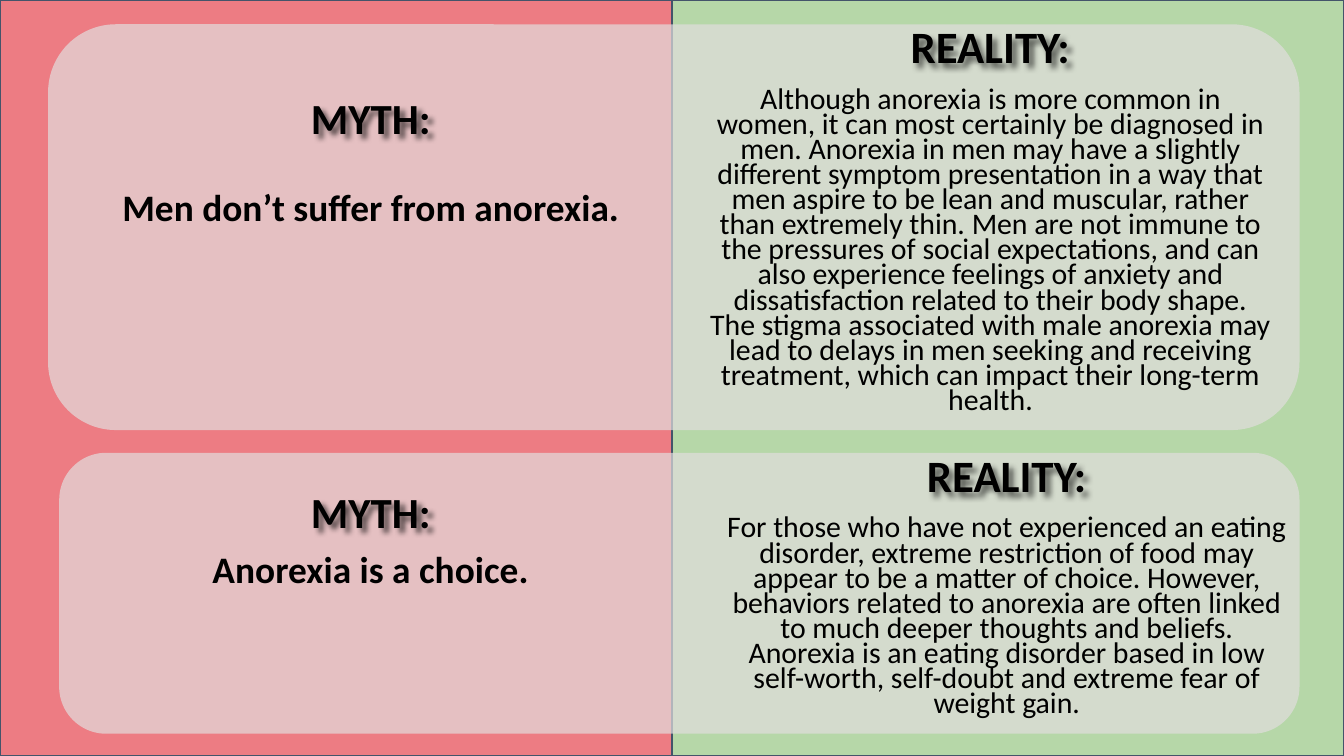
from typing import NamedTuple

from lxml import etree
from pptx import Presentation
from pptx.dml.color import RGBColor
from pptx.enum.shapes import MSO_SHAPE
from pptx.enum.text import MSO_ANCHOR, PP_ALIGN
from pptx.oxml.ns import qn
from pptx.util import Cm, Pt

RECTANGLE = MSO_SHAPE.RECTANGLE
ROUNDED = MSO_SHAPE.ROUNDED_RECTANGLE
TOP = MSO_ANCHOR.TOP
CENTER = PP_ALIGN.CENTER

SLIDE_WIDTH, SLIDE_HEIGHT = 25.4, 14.29
HALF = SLIDE_WIDTH / 2
FONT = "Calibri"
RED, GREEN, GREY = "ED7C83", "B6D7A8", "E2DEDE"
NAVY, BLACK = "44546A", "000000"
REALITY_INDENT = 0.48


class Box(NamedTuple):
    """Left, top, width and height in centimetres."""
    left: float
    top: float
    width: float
    height: float

    def lengths(self) -> list[Cm]:
        return [Cm(value) for value in self]


class Statement(NamedTuple):
    text: str
    box: Box
    text_top: float


class Pair(NamedTuple):
    card: Box
    myth_heading: Box
    myth: Statement
    reality_heading: Box
    reality: Statement


PAIRS = [
    Pair(
        card=Box(0.91, 0.46, 23.65, 7.67),
        myth_heading=Box(1.93, 1.82, 10.16, 1.3),
        myth=Statement("Men don’t suffer from anorexia.",
                       Box(1.93, 2.67, 10.16, 3.28), 1.59),
        reality_heading=Box(13, 0.46, 10.95, 1.55),
        reality=Statement(
            "Although anorexia is more common in women, it can most certainly "
            "be diagnosed in men. Anorexia in men may have a slightly "
            "different symptom presentation in a way that men aspire to be "
            "lean and muscular, rather than extremely thin. Men are not immune "
            "to the pressures of social expectations, and can also experience "
            "feelings of anxiety and dissatisfaction related to their body "
            "shape. The stigma associated with male anorexia may lead to "
            "delays in men seeking and receiving treatment, which can impact "
            "their long-term health.",
            Box(12.7, 0.46, 11.56, 5.66), 1.23),
    ),
    Pair(
        card=Box(1.12, 8.56, 23.44, 5.31),
        myth_heading=Box(1.93, 9.27, 10.16, 1.3),
        myth=Statement("Anorexia is a choice.",
                       Box(1.53, 9.27, 10.95, 3.89), 2.07),
        reality_heading=Box(13.31, 8.56, 10.95, 1.55),
        reality=Statement(
            "For those who have not experienced an eating disorder, extreme "
            "restriction of food may appear to be a matter of choice. However, "
            "behaviors related to anorexia are often linked to much deeper "
            "thoughts and beliefs. Anorexia is an eating disorder based in low "
            "self-worth, self-doubt and extreme fear of weight gain.",
            Box(13.01, 8.59, 11.56, 5.66), 1.2),
    ),
]


def color(value: str) -> RGBColor:
    return RGBColor.from_string(value)


def add_alpha(color_element, percent: int) -> None:
    etree.SubElement(color_element, qn("a:alpha"), val=str(percent * 1000))


def add_panel(slide, box: Box, fill: str) -> None:
    panel = slide.shapes.add_shape(RECTANGLE, *box.lengths())
    panel.shadow.inherit = False
    panel.fill.solid()
    panel.fill.fore_color.rgb = color(fill)
    panel.line.color.rgb = color(NAVY)
    panel.line.width = Pt(0.75)


def add_card(slide, box: Box) -> None:
    card = slide.shapes.add_shape(ROUNDED, *box.lengths())
    card.shadow.inherit = False
    card.adjustments[0] = 0.167
    card.fill.solid()
    card.fill.fore_color.rgb = color(GREY)
    add_alpha(card.fill._xPr.find(".//" + qn("a:srgbClr")), 70)
    card.line.fill.background()


def add_text_shadow(text_box) -> None:
    """Give the letters of an unfilled box a soft shadow to the lower right."""
    effects = etree.SubElement(text_box._element.spPr, qn("a:effectLst"))
    shadow = etree.SubElement(effects, qn("a:outerShdw"), blurRad="38100",
                              dist="38100", dir="2700000", algn="tl",
                              rotWithShape="0")
    add_alpha(etree.SubElement(shadow, qn("a:srgbClr"), val=BLACK), 60)


def add_text(slide, text: str, box: Box, *, size: float, bold: bool = False,
             spacing: float = 0.7, indent: float = 0, text_top: float = 0.1,
             shadow: bool = False) -> None:
    text_box = slide.shapes.add_textbox(*box.lengths())
    frame = text_box.text_frame
    frame.word_wrap = True
    frame.vertical_anchor = TOP
    frame.margin_left = frame.margin_right = Cm(0.23)
    frame.margin_top, frame.margin_bottom = Cm(text_top), Cm(0.1)
    paragraph = frame.paragraphs[0]
    paragraph.alignment = CENTER
    paragraph.line_spacing = spacing
    paragraph._p.get_or_add_pPr().set("marL", str(Cm(indent)))
    run = paragraph.add_run()
    run.text = text
    run.font.name = FONT
    run.font.size = Pt(size)
    run.font.bold = bold
    run.font.color.rgb = color(BLACK)
    if shadow:
        add_text_shadow(text_box)


def add_pair(slide, pair: Pair) -> None:
    add_card(slide, pair.card)
    add_text(slide, pair.myth.text, pair.myth.box, size=20, bold=True,
             text_top=pair.myth.text_top)
    add_text(slide, pair.reality.text, pair.reality.box, size=16,
             indent=REALITY_INDENT, text_top=pair.reality.text_top)
    add_text(slide, "MYTH:", pair.myth_heading, size=23, bold=True,
             spacing=0.8, shadow=True)
    add_text(slide, "REALITY:", pair.reality_heading, size=24, bold=True,
             spacing=0.8, indent=REALITY_INDENT, shadow=True)


def main() -> None:
    presentation = Presentation()
    presentation.slide_width = Cm(SLIDE_WIDTH)
    presentation.slide_height = Cm(SLIDE_HEIGHT)
    slide = presentation.slides.add_slide(presentation.slide_layouts[6])
    add_panel(slide, Box(HALF, 0, HALF, SLIDE_HEIGHT), GREEN)
    add_panel(slide, Box(0, 0, HALF, SLIDE_HEIGHT), RED)
    for pair in PAIRS:
        add_pair(slide, pair)
    presentation.save("out.pptx")


if __name__ == "__main__":
    main()
